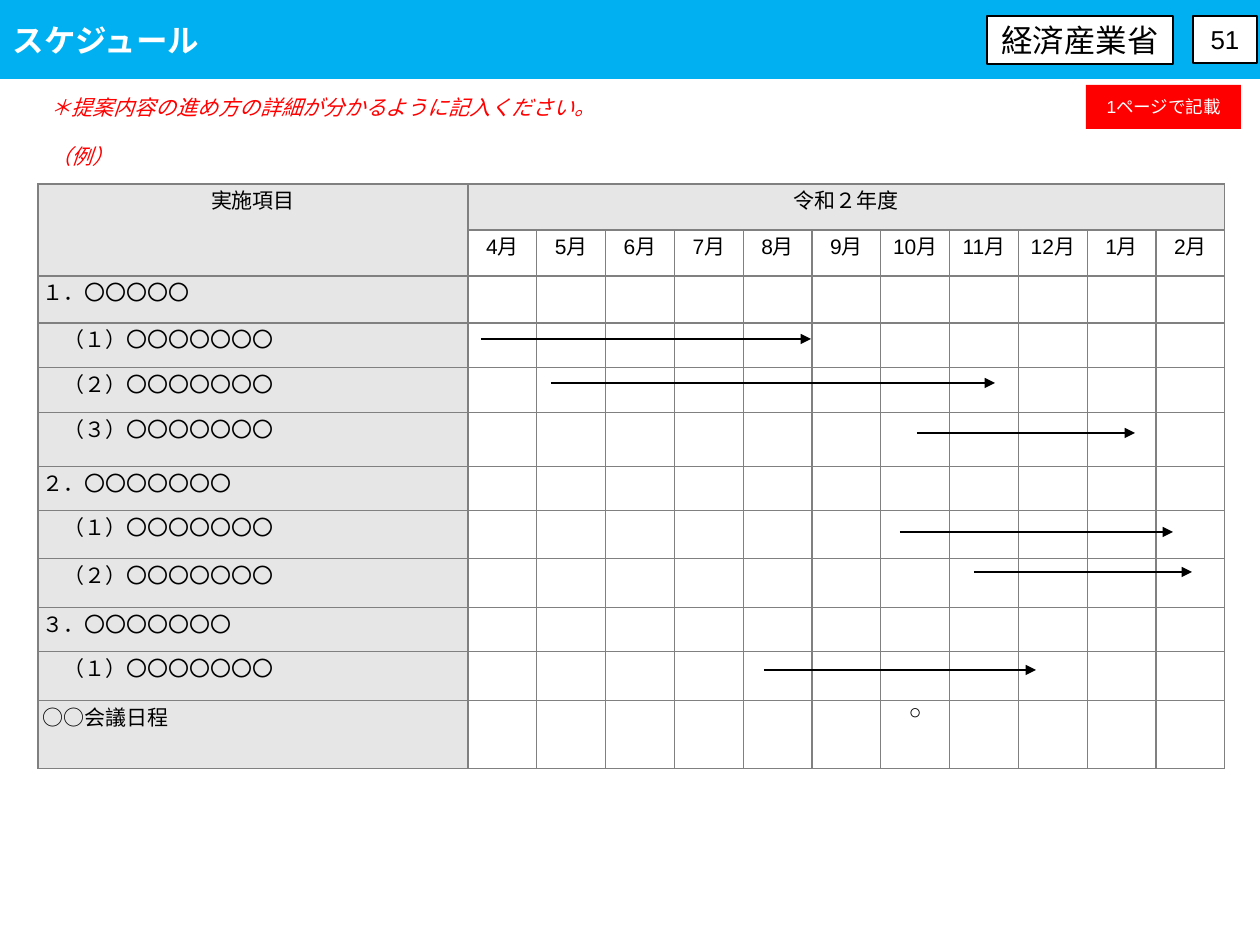
from lxml import etree
from pptx import Presentation
from pptx.dml.color import RGBColor
from pptx.enum.shapes import MSO_CONNECTOR, MSO_SHAPE
from pptx.enum.text import MSO_ANCHOR, MSO_AUTO_SIZE, PP_ALIGN
from pptx.oxml.ns import qn
from pptx.util import Pt

STRAIGHT = MSO_CONNECTOR.STRAIGHT
RECTANGLE = MSO_SHAPE.RECTANGLE
MIDDLE = MSO_ANCHOR.MIDDLE
NO_AUTOFIT = MSO_AUTO_SIZE.NONE
LEFT, CENTER, JUSTIFY = PP_ALIGN.LEFT, PP_ALIGN.CENTER, PP_ALIGN.JUSTIFY

EMU_PER_PX = 914400 / 126
LATIN, JAPANESE = "Arial", "Noto Sans CJK JP"
BLACK, WHITE, RED, BLUE = "000000", "FFFFFF", "FF0000", "00B0F0"
GRID, LABEL_FILL = "808080", "E6E6E6"

CELL_INSET, INDENT = 5, 21
LABEL_WIDTH = 430
HEADER_HEIGHTS = [46, 46]
MONTHS = [f"{month}月" for month in [*range(4, 13), 1, 2]]
MEETING_MONTH = "10月"

# Label, indent level, row height, arrow (start x, end x, y below the row top)
TASKS = [
    ("１．〇〇〇〇〇", 0, 47, None),
    ("（１）〇〇〇〇〇〇〇", 1, 45, (443, 773, 16)),
    ("（２）〇〇〇〇〇〇〇", 1, 45, (513, 957, 15)),
    ("（３）〇〇〇〇〇〇〇", 1, 54, (879, 1097, 20)),
    ("２．〇〇〇〇〇〇〇", 0, 44, None),
    ("（１）〇〇〇〇〇〇〇", 1, 48, (862, 1135, 21)),
    ("（２）〇〇〇〇〇〇〇", 1, 49, (936, 1154, 13)),
    ("３．〇〇〇〇〇〇〇", 0, 44, None),
    ("（１）〇〇〇〇〇〇〇", 1, 49, (726, 998, 18)),
    ("○○会議日程", 0, 68, None),
]


def px(length):
    return round(length * EMU_PER_PX)


def color(hex_string):
    return RGBColor.from_string(hex_string)


def format_paragraph(paragraph, size, hex_string, align, name=LATIN):
    paragraph.alignment = align
    font = paragraph.font
    font.size, font.name = Pt(size), name
    font.color.rgb = color(hex_string)


def place(shape, box):
    shape.left, shape.top, shape.width, shape.height = map(px, box)


def add_label(slide, box, text, size, fill, text_color, line_width=0):
    shape = slide.shapes.add_shape(RECTANGLE, *map(px, box))
    shape.shadow.inherit = False
    shape.fill.solid()
    shape.fill.fore_color.rgb = color(fill)
    if line_width:
        shape.line.color.rgb = color(BLACK)
        shape.line.width = Pt(line_width)
    else:
        shape.line.fill.background()
    frame = shape.text_frame
    frame.word_wrap = True
    frame.vertical_anchor = MIDDLE
    frame.text = text
    format_paragraph(frame.paragraphs[0], size, text_color, CENTER)


def add_arrow(slide, start_x, end_x, y):
    arrow = slide.shapes.add_connector(STRAIGHT, px(start_x), px(y), px(end_x), px(y))
    arrow.line.color.rgb = color(BLACK)
    arrow.line.width = Pt(0.75)
    etree.SubElement(arrow.line._get_or_add_ln(), qn("a:tailEnd"), type="triangle")
    etree.SubElement(arrow._element.spPr, qn("a:effectLst"))


def add_header(slide, box):
    left, top, width, height = box
    # Title band
    title = slide.shapes.title
    place(title, box)
    title.fill.solid()
    title.fill.fore_color.rgb = color(BLUE)
    frame = title.text_frame
    frame.text = "スケジュール"
    frame.auto_size = NO_AUTOFIT
    frame.vertical_anchor = MIDDLE
    format_paragraph(frame.paragraphs[0], 18, WHITE, LEFT, JAPANESE)
    frame.paragraphs[0].font.bold = True
    # Ministry and page number
    right = left + width
    add_label(slide, (right - 273, top + 16, 186, 48), "経済産業省", 18, WHITE, BLACK, 1)
    add_label(slide, (right - 67, top + 16, 64, 47), "51", 14.8, WHITE, BLACK, 0.75)


def add_instructions(slide, box):
    left, top, width, height = box
    text_box = slide.shapes.add_textbox(*map(px, box))
    frame = text_box.text_frame
    frame.word_wrap = True
    frame.text = "＊提案内容の進め方の詳細が分かるように記入ください。\n（例）"
    for paragraph in frame.paragraphs:
        format_paragraph(paragraph, 12, RED, LEFT)
        paragraph.font.italic = True
    frame.paragraphs[1].space_before = Pt(14)
    add_label(slide, (left + width - 139, top - 3, 155, 44), "1ページで記載", 10, RED, WHITE)


def style_cell(cell, filled):
    cell.margin_left = cell.margin_right = px(CELL_INSET)
    cell.margin_top = cell.margin_bottom = 0
    properties = cell._tc.get_or_add_tcPr()
    for side in ("lnL", "lnR", "lnT", "lnB"):
        border = etree.SubElement(properties, qn(f"a:{side}"), w=str(Pt(0.75)))
        border_fill = etree.SubElement(border, qn("a:solidFill"))
        etree.SubElement(border_fill, qn("a:srgbClr"), val=GRID)
    if filled:
        cell.fill.solid()
        cell.fill.fore_color.rgb = color(LABEL_FILL)
    else:
        cell.fill.background()
    cell.text_frame.paragraphs[0].line_spacing = Pt(18.1)


def write_cell(cell, text, align=CENTER):
    cell.text_frame.text = text
    format_paragraph(cell.text_frame.paragraphs[0], 12, BLACK, align)


def add_schedule(slide, box):
    left, top, width, height = box
    row_heights = HEADER_HEIGHTS + [task[2] for task in TASKS]
    frame = slide.shapes.add_table(len(row_heights), len(MONTHS) + 1, *map(px, box))
    table = frame.table
    table.first_row = table.horz_banding = False

    # Grid
    month_width = (width - LABEL_WIDTH) / len(MONTHS)
    for index, column in enumerate(table.columns):
        column.width = px(month_width if index else LABEL_WIDTH)
    for row_index, row in enumerate(table.rows):
        row.height = px(row_heights[row_index])
        for column_index, cell in enumerate(row.cells):
            style_cell(cell, row_index == 0 or column_index == 0)

    # Headings
    table.cell(0, 0).merge(table.cell(1, 0))
    table.cell(0, 1).merge(table.cell(0, len(MONTHS)))
    write_cell(table.cell(0, 0), "実施項目")
    write_cell(table.cell(0, 1), "令和２年度")
    for index, month in enumerate(MONTHS, 1):
        write_cell(table.cell(1, index), month)

    # Tasks and their arrows
    for index, (text, level, _, arrow) in enumerate(TASKS, len(HEADER_HEIGHTS)):
        cell = table.cell(index, 0)
        cell.margin_left = px(CELL_INSET + level * INDENT)
        write_cell(cell, text, JUSTIFY)
        if arrow:
            start_x, end_x, y = arrow
            row_top = top + sum(row_heights[:index])
            add_arrow(slide, left + start_x, left + end_x, row_top + y)
    write_cell(table.cell(len(row_heights) - 1, MONTHS.index(MEETING_MONTH) + 1), "○")


def main():
    presentation = Presentation()
    presentation.slide_width, presentation.slide_height = px(1260), px(945)
    slide = presentation.slides.add_slide(presentation.slide_layouts[5])
    add_header(slide, (0, 0, 1260, 79))
    add_instructions(slide, (38, 88, 1187, 118))
    add_schedule(slide, (38, 184, 1187, 585))
    presentation.save("out.pptx")


if __name__ == "__main__":
    main()
